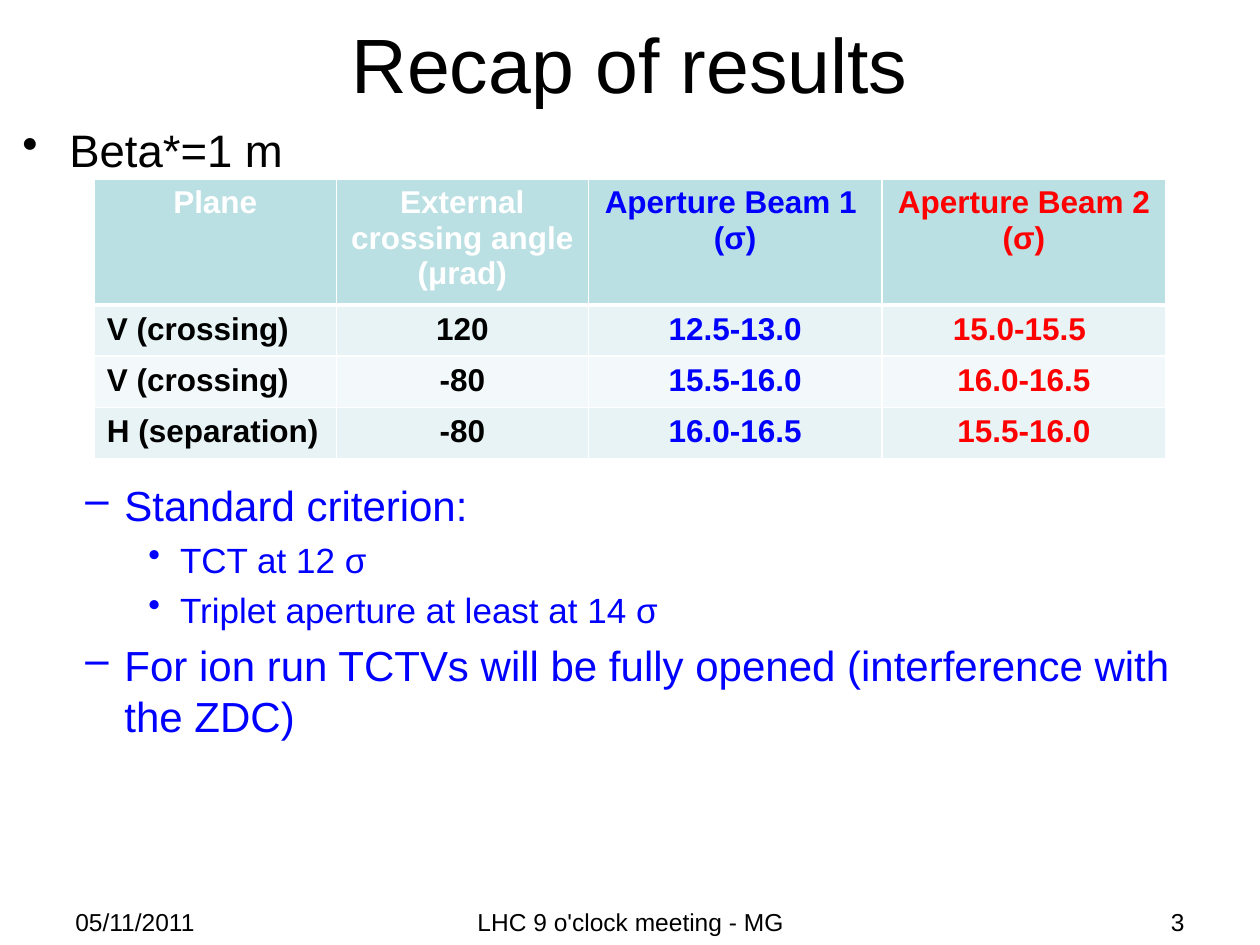
from lxml.etree import SubElement
from pptx import Presentation
from pptx.dml.color import RGBColor
from pptx.enum.text import MSO_ANCHOR as Anchor, PP_ALIGN as Align
from pptx.oxml import parse_xml
from pptx.oxml.ns import nsdecls, qn
from pptx.util import Cm, Pt

BLACK, WHITE, BLUE, RED = "000000", "FFFFFF", "0000FF", "FF0000"
HEADER_FILL, BAND_FILLS = "BBE0E3", ("E7F3F4", "F3F9FA")


def colour(code):
    return RGBColor.from_string(code)


class SlideWriter:
    font = "Arial"
    # Per level: bullet, text indent and bullet offset in cm
    levels = (("•", 0.95, 0.95), ("–", 2.06, 0.79), ("•", 3.18, 0.64))

    def __init__(self, page):
        self.page = page

    def style(self, para, size, code, bold=False, align=Align.LEFT):
        para.alignment = align
        para.font.name = self.font
        para.font.size = Pt(size)
        para.font.bold = bold
        para.font.color.rgb = colour(code)

    def frame(self, left, top, width, height):
        box = self.page.shapes.add_textbox(Cm(left), Cm(top), Cm(width), Cm(height))
        box.text_frame.word_wrap = True
        return box.text_frame

    def text(self, words, place, size, align=Align.LEFT, anchor=Anchor.TOP):
        frame = self.frame(*place)
        frame.vertical_anchor = anchor
        frame.text = words
        self.style(frame.paragraphs[0], size, BLACK, align=align)

    def bullets(self, items, place):
        frame = self.frame(*place)
        for number, (level, words, size, code, gap) in enumerate(items):
            para = frame.add_paragraph() if number else frame.paragraphs[0]
            para.text = words
            para.level = level
            para.space_before = Pt(gap)
            mark, indent, offset = self.levels[level]
            props = para._p.get_or_add_pPr()
            props.set("marL", str(Cm(indent)))
            props.set("indent", str(-Cm(offset)))
            SubElement(props, qn("a:buChar"), char=mark)
            self.style(para, size, code)

    def borders(self, cell, top, bottom):
        props = cell._tc.get_or_add_tcPr()
        sides = (("lnL", 1), ("lnR", 1), ("lnT", top), ("lnB", bottom))
        for place, (side, width) in enumerate(sides):
            props.insert(place, parse_xml(
                f'<a:{side} {nsdecls("a")} w="{Pt(width)}"><a:solidFill>'
                f'<a:srgbClr val="{WHITE}"/></a:solidFill></a:{side}>'))

    def table(self, rows, left, top, widths, heights):
        grid = self.page.shapes.add_table(
            len(rows), len(widths), Cm(left), Cm(top),
            Cm(sum(widths)), Cm(sum(heights))).table
        grid.first_row = grid.horz_banding = False
        for column, width in zip(grid.columns, widths):
            column.width = Cm(width)
        for r, (words_row, height) in enumerate(zip(rows, heights)):
            grid.rows[r].height = Cm(height)
            for c, words in enumerate(words_row):
                cell = grid.cell(r, c)
                cell.fill.solid()
                cell.fill.fore_color.rgb = colour(BAND_FILLS[(r - 1) % 2] if r else HEADER_FILL)
                self.borders(cell, 3 if r == 1 else 1, 1 if r else 3)
                cell.text = words
                plain = BLACK if r else WHITE
                align = Align.LEFT if r and c == 0 else Align.CENTER
                for para in cell.text_frame.paragraphs:
                    self.style(para, 18, (plain, plain, BLUE, RED)[c], True, align)


def main():
    deck = Presentation()
    deck.slide_width, deck.slide_height = Cm(25.4), Cm(19.05)
    writer = SlideWriter(deck.slides.add_slide(deck.slide_layouts[6]))

    # Title
    writer.text("Recap of results", (1.27, 0, 22.86, 2.54), 44, Align.CENTER, Anchor.MIDDLE)

    # Bullets, with room for the table after the first
    writer.bullets([
        (0, "Beta*=1 m", 26, BLACK, 2.6),
        (1, "Standard criterion:", 24, BLUE, 173),
        (2, "TCT at 12 σ", 20, BLUE, 4.6),
        (2, "Triplet aperture at least at 14 σ", 20, BLUE, 4.6),
        (1, "For ion run TCTVs will be fully opened (interference with the ZDC)", 24, BLUE, 5.5),
    ], (0.2, 2.34, 24.77, 15.44))

    # Footer
    footer_top, footer_height = 18.16, 1.32
    for words, left, width, align in (
            ("05/11/2011", 1.27, 5.92, Align.LEFT),
            ("LHC 9 o'clock meeting - MG", 8.69, 8.05, Align.CENTER),
            ("3", 18.21, 5.92, Align.RIGHT)):
        writer.text(words, (left, footer_top, width, footer_height), 14, align)

    # Aperture table
    writer.table([
        ("Plane", "External crossing angle (μrad)", "Aperture Beam 1 \n(σ)", "Aperture Beam 2 (σ)"),
        ("V (crossing)", "120", "12.5-13.0", "15.0-15.5 "),
        ("V (crossing)", "-80", "15.5-16.0", "16.0-16.5"),
        ("H (separation)", "-80", "16.0-16.5", "15.5-16.0"),
    ], 1.9, 3.61, (4.88, 5.08, 5.92, 5.72), (2.36, 1.03, 1.03, 1.03))

    deck.save("out.pptx")


if __name__ == "__main__":
    main()
